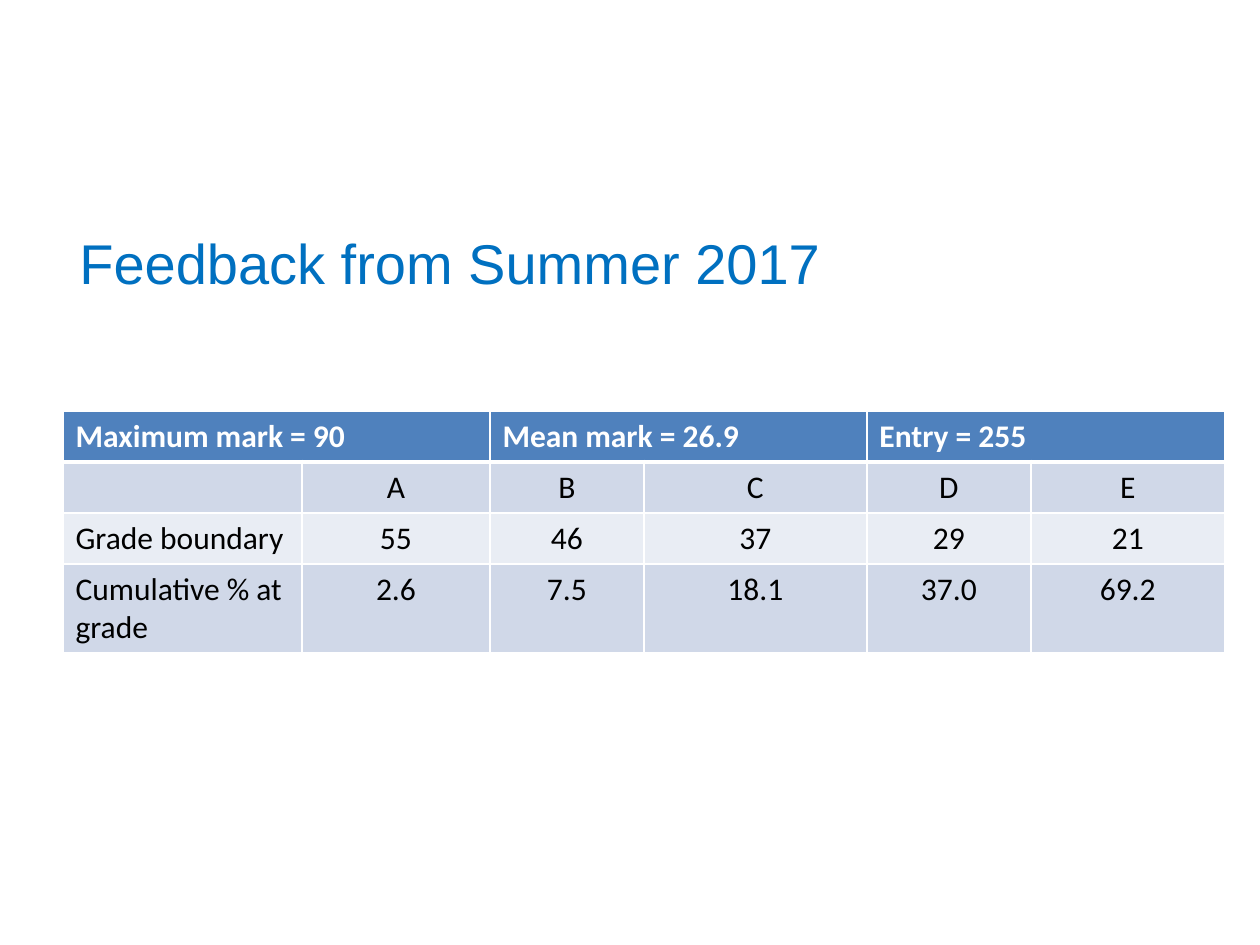
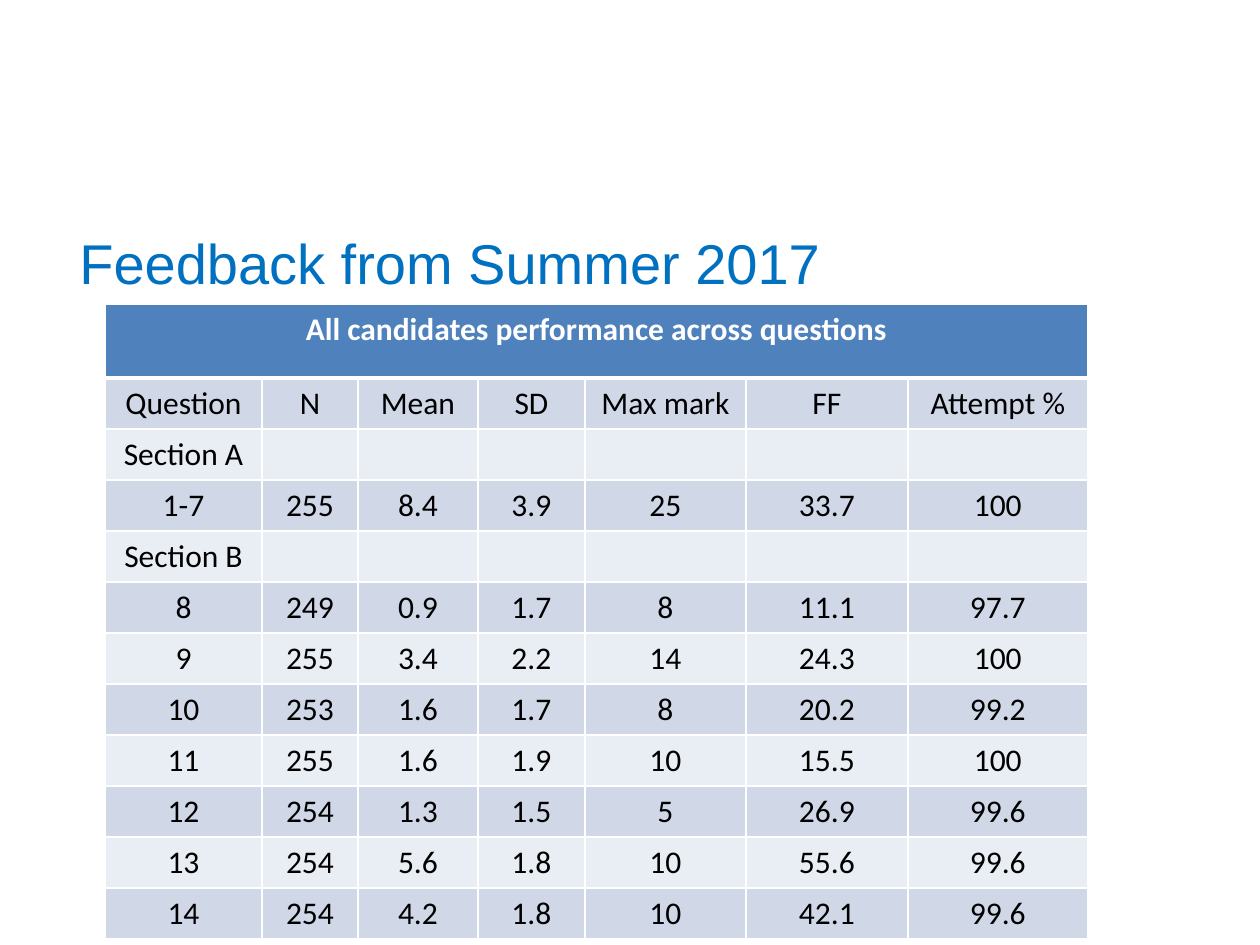
from lxml import etree
from pptx import Presentation
from pptx.dml.color import RGBColor
from pptx.enum.text import PP_ALIGN
from pptx.oxml.ns import qn
from pptx.util import Emu, Pt

LEFT, CENTER = PP_ALIGN.LEFT, PP_ALIGN.CENTER

PX = 914400 // 126
SLIDE_SIZE = (1260, 945)
BLANK_LAYOUT = 6

BLUE, WHITE, BLACK = "0070C0", "FFFFFF", "000000"
HEADER_FILL = "4F81BD"
BAND_FILLS = ("D0D8E8", "E9EDF4")
TITLE_FONT, TABLE_FONT = "Arial", "Calibri"

TITLE = "Feedback from Summer 2017"
TITLE_BOX = (67, 215, 1160, 164)
TITLE_INSET_TOP = 14
ROW_HEIGHT = 51

# Each heading is a text and the number of columns it spans.
GRADES = {
    "origin": (63, 411),
    "columns": (239, 188, 154, 223, 164, 194),
    "heights": (ROW_HEIGHT, ROW_HEIGHT, ROW_HEIGHT, 89),
    "headings": [("Maximum mark = 90", 2), ("Mean mark = 26.9", 2), ("Entry = 255", 2)],
    "heading_align": LEFT,
    "label_align": LEFT,
    "rows": [
        ("", "A", "B", "C", "D", "E"),
        ("Grade boundary", "55", "46", "37", "29", "21"),
        ("Cumulative % at grade", "2.6", "7.5", "18.1", "37.0", "69.2"),
    ],
}

QUESTIONS = {
    "origin": (105, 304),
    "columns": (157, 96, 120, 107, 161, 162, 180),
    "heights": (74,) + (ROW_HEIGHT,) * 11,
    "headings": [("All candidates performance across questions", 7)],
    "heading_align": CENTER,
    "label_align": CENTER,
    "rows": [
        ("Question", "N", "Mean", "SD", "Max mark", "FF", "Attempt %"),
        ("Section A",) + ("",) * 6,
        ("1-7", "255", "8.4", "3.9", "25", "33.7", "100"),
        ("Section B",) + ("",) * 6,
        ("8", "249", "0.9", "1.7", "8", "11.1", "97.7"),
        ("9", "255", "3.4", "2.2", "14", "24.3", "100"),
        ("10", "253", "1.6", "1.7", "8", "20.2", "99.2"),
        ("11", "255", "1.6", "1.9", "10", "15.5", "100"),
        ("12", "254", "1.3", "1.5", "5", "26.9", "99.6"),
        ("13", "254", "5.6", "1.8", "10", "55.6", "99.6"),
        ("14", "254", "4.2", "1.8", "10", "42.1", "99.6"),
    ],
}


def px(*lengths):
    return [Emu(length * PX) for length in lengths]


def color(hex_string):
    return RGBColor.from_string(hex_string)


def add_run(paragraph, text, font, size, hex_string, bold=False):
    run = paragraph.add_run()
    run.text = text
    run.font.name = font
    run.font.size = Pt(size)
    run.font.bold = bold
    run.font.color.rgb = color(hex_string)


def add_title(slide):
    frame = slide.shapes.add_textbox(*px(*TITLE_BOX)).text_frame
    frame.word_wrap = True
    frame.margin_top = px(TITLE_INSET_TOP)[0]
    add_run(frame.paragraphs[0], TITLE, TITLE_FONT, 32, BLUE)


def set_borders(cell, top, bottom):
    """Draw white cell borders; top and bottom are widths in points."""
    properties = cell._tc.get_or_add_tcPr()
    for side, width in (("L", 1), ("R", 1), ("T", top), ("B", bottom)):
        line = etree.SubElement(properties, qn(f"a:ln{side}"), w=str(Pt(width)))
        fill = etree.SubElement(line, qn("a:solidFill"))
        etree.SubElement(fill, qn("a:srgbClr"), val=WHITE)


def style_cell(cell, row):
    set_borders(cell, top=3 if row == 1 else 1, bottom=3 if row == 0 else 1)
    cell.fill.solid()
    cell.fill.fore_color.rgb = color(BAND_FILLS[(row - 1) % 2] if row else HEADER_FILL)


def write_cell(cell, text, align, hex_string, bold=False):
    paragraph = cell.text_frame.paragraphs[0]
    paragraph.alignment = align
    if text:
        add_run(paragraph, text, TABLE_FONT, 18, hex_string, bold)


def add_results(slide, results):
    widths, heights = results["columns"], results["heights"]
    table = slide.shapes.add_table(
        len(heights), len(widths),
        *px(*results["origin"], sum(widths), sum(heights))).table
    table.horz_banding = False
    for column, width in zip(table.columns, px(*widths)):
        column.width = width
    for row, height in zip(table.rows, px(*heights)):
        row.height = height
    for r in range(len(heights)):
        for c in range(len(widths)):
            style_cell(table.cell(r, c), r)

    start = 0
    for heading, span in results["headings"]:
        cell = table.cell(0, start)
        cell.merge(table.cell(0, start + span - 1))
        write_cell(cell, heading, results["heading_align"], WHITE, bold=True)
        start += span
    for r, values in enumerate(results["rows"], 1):
        for c, value in enumerate(values):
            align = CENTER if c else results["label_align"]
            write_cell(table.cell(r, c), value, align, BLACK)


def main():
    deck = Presentation()
    deck.slide_width, deck.slide_height = px(*SLIDE_SIZE)
    for results in (GRADES, QUESTIONS):
        slide = deck.slides.add_slide(deck.slide_layouts[BLANK_LAYOUT])
        add_title(slide)
        add_results(slide, results)
    deck.save("out.pptx")


if __name__ == "__main__":
    main()
